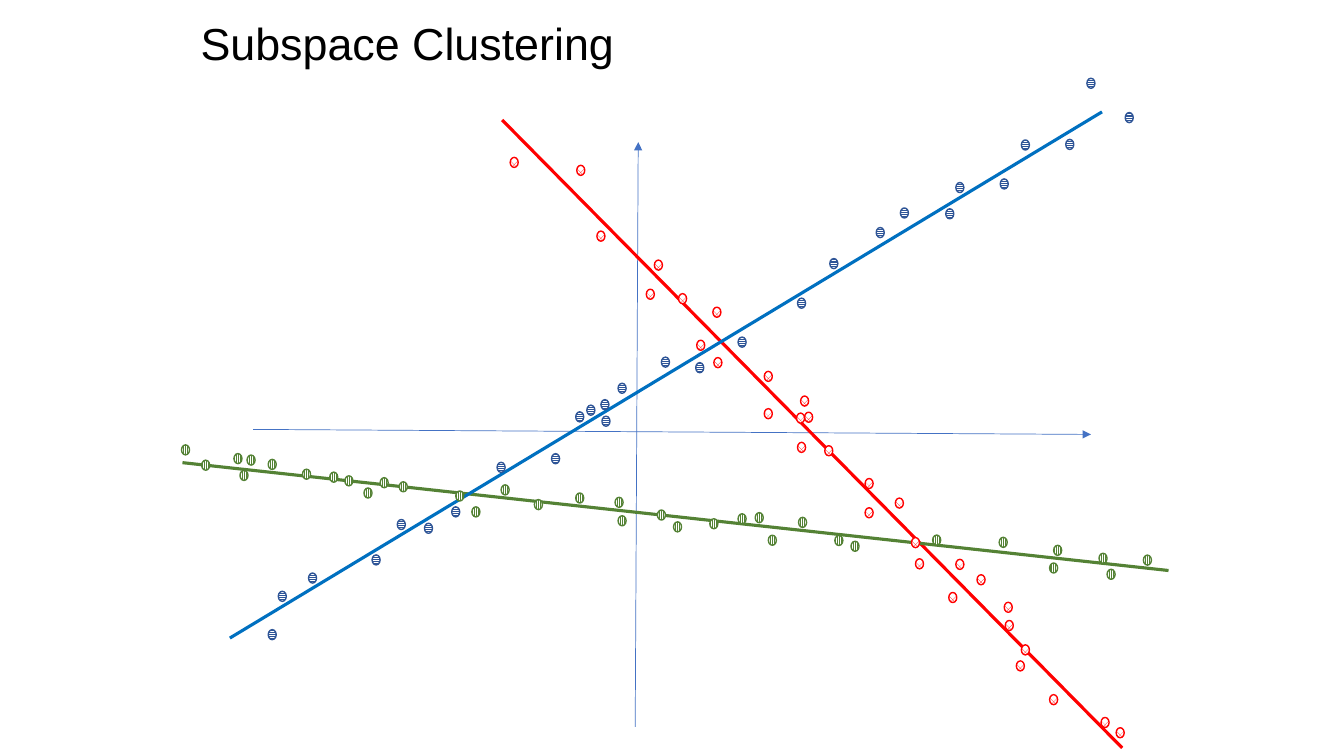
"""Build the Subspace Clustering slide: three point clouds along three lines."""
import dataclasses

import pptx
import pptx.dml.color
import pptx.enum.dml
import pptx.enum.shapes
import pptx.enum.text
import pptx.oxml
import pptx.oxml.ns
import pptx.util

COLORS = {
    "title": "000000",
    "axis": "4472C4",
    "red": "FF0000",
    "green": "548235",
    "blue line": "0070C0",
    "blue points": "2F5597",
    "paper": "FFFFFF",
}
PATTERN = pptx.enum.dml.MSO_PATTERN
POINT_WIDTH, POINT_HEIGHT = 0.08, 0.1
AXES = {
    "vertical": ((6.3, 7.21), (6.33, 1.41)),
    "horizontal": ((2.51, 4.26), (10.82, 4.31)),
}


@dataclasses.dataclass
class Cluster:
    """A subspace line and its points, as {drop below the line: left edges}."""
    start: tuple
    end: tuple
    line_color: str
    point_color: str
    pattern: PATTERN
    scatter: dict

    def height_at(self, x):
        """Return the line's y at a given x."""
        (x0, y0), (x1, y1) = self.start, self.end
        return y0 + (y1 - y0) * (x - x0) / (x1 - x0)

    def points(self):
        """Yield the left and top of each point, placed relative to the line."""
        for drop, lefts in self.scatter.items():
            for left in lefts:
                center = self.height_at(left + POINT_WIDTH / 2) + drop
                yield left, center - POINT_HEIGHT / 2


CLUSTERS = [
    Cluster((4.98, 1.19), (11.13, 7.42), "red", "red", PATTERN.PERCENT_25, {
        -0.29: [5.72],
        -0.25: [7.07, 7.94, 9.69, 9.96],
        -0.19: [8.88, 9.48],
        -0.13: [6.49, 7.58, 7.98, 11.07],
        -0.08: [8.58, 9.97, 10.92],
        -0.04: [6.73, 7.9],
        0: [8.18, 10.13],
        0.04: [9.04],
        0.16: [5.92],
        0.21: [8.58, 9.08, 9.41, 10.08, 10.41],
        0.24: [6.41, 6.91, 7.08, 7.58, 7.91],
        0.3: [5.06],
    }),
    Cluster((1.81, 4.59), (11.59, 5.66), "green", "green", PATTERN.NARROW_VERTICAL, {
        -0.13: [1.8],
        -0.1: [2.32, 2.45, 9.91],
        -0.08: [2.66, 4.97, 5.71, 6.1, 7.49, 7.92, 10.45, 11.34],
        -0.05: [7.32, 9.25, 10.9],
        -0.02: [3, 3.27, 3.77],
        0: [2, 3.42, 3.96, 6.52],
        0.03: [4.52, 5.3, 7.04],
        0.06: [2.38, 8.28],
        0.1: [3.61, 6.13, 6.68, 8.44, 10.41, 10.98],
        0.13: [7.62],
        0.17: [4.68],
    }),
    Cluster((2.28, 6.33), (10.93, 1.11), "blue line", "blue points",
            PATTERN.NARROW_HORIZONTAL, {
        -0.35: [10.78],
        -0.18: [8.93],
        -0.13: [6.13, 6.56, 8.69, 10.13],
        -0.1: [2.76, 3.06, 3.94, 5.71, 5.82, 8.23, 9.48],
        -0.07: [4.93, 5.96],
        0.1: [3.69, 4.21, 4.48, 5.97, 7.91, 9.38],
        0.13: [6.9, 7.32, 9.92, 10.57],
        0.17: [5.47],
        0.22: [2.66, 11.16],
    }),
]


def lengths(*inches):
    """Convert inch values to centimetre lengths."""
    return [pptx.util.Cm(value * 2.54) for value in inches]


def rgb(name):
    """Look up a named colour."""
    return pptx.dml.color.RGBColor.from_string(COLORS[name])


def drawing_element(tag, attributes=""):
    """Create an empty DrawingML element."""
    return pptx.oxml.parse_xml(
        f"<a:{tag} {pptx.oxml.ns.nsdecls('a')} {attributes}/>")


def add_title(slide, text):
    """Write the slide heading."""
    title = slide.shapes.add_textbox(*lengths(1.89, 0.11, 9.18, 0.64))
    frame = title.text_frame
    frame.word_wrap = True
    frame.auto_size = pptx.enum.text.MSO_AUTO_SIZE.SHAPE_TO_FIT_TEXT
    heading = frame.paragraphs[0]
    heading.text = text
    heading.font.name = "Arial"
    heading.font.size = pptx.util.Pt(32)
    heading.font.color.rgb = rgb("title")


def set_outline(drawn, color, width):
    """Give a point or line its outline colour and width."""
    drawn.line.color.rgb = rgb(color)
    drawn.line.width = pptx.util.Pt(width)


def add_line(slide, start, end, color, width):
    """Draw a straight line without a shadow."""
    line = slide.shapes.add_connector(
        pptx.enum.shapes.MSO_CONNECTOR.STRAIGHT, *lengths(*start, *end))
    set_outline(line, color, width)
    line._element.spPr.append(drawing_element("effectLst"))
    return line


def add_axis(slide, start, end):
    """Draw a thin axis with an arrowhead at its end."""
    axis = add_line(slide, start, end, "axis", 0.5)
    axis.line._get_or_add_ln().append(
        drawing_element("tailEnd", "type='triangle'"))


def add_point(slide, left, top, color, pattern):
    """Draw one patterned data point."""
    point = slide.shapes.add_shape(
        pptx.enum.shapes.MSO_SHAPE.OVAL,
        *lengths(left, top, POINT_WIDTH, POINT_HEIGHT))
    point.shadow.inherit = False
    point.fill.patterned()
    point.fill.pattern = pattern
    point.fill.fore_color.rgb = rgb(color)
    point.fill.back_color.rgb = rgb("paper")
    set_outline(point, color, 1)


def main():
    """Assemble and save the slide."""
    deck = pptx.Presentation()
    deck.slide_width, deck.slide_height = lengths(13.33, 7.5)
    slide = deck.slides.add_slide(deck.slide_layouts[6])
    add_title(slide, "Subspace Clustering")
    for start, end in AXES.values():
        add_axis(slide, start, end)
    for cluster in CLUSTERS:
        add_line(slide, cluster.start, cluster.end, cluster.line_color, 2.25)
    for cluster in CLUSTERS:
        for left, top in cluster.points():
            add_point(slide, left, top, cluster.point_color, cluster.pattern)
    deck.save("out.pptx")


if __name__ == "__main__":
    main()
